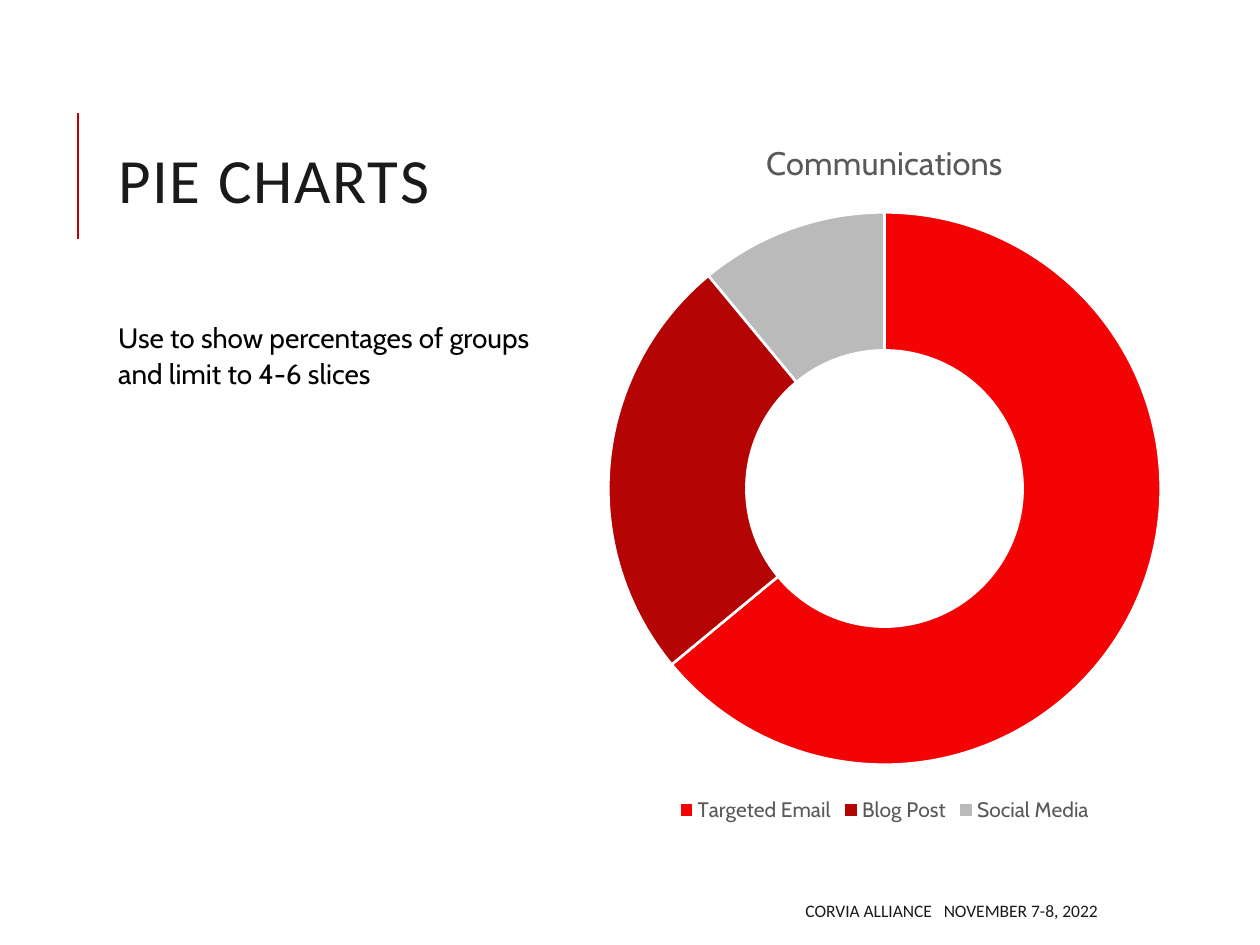
"""Build the pie chart guidance slide with its communications doughnut."""
from dataclasses import dataclass

from lxml.etree import SubElement
from pptx import Presentation
from pptx.chart.data import CategoryChartData
from pptx.dml.color import RGBColor
from pptx.enum.chart import XL_CHART_TYPE, XL_LEGEND_POSITION
from pptx.enum.shapes import MSO_CONNECTOR
from pptx.enum.text import MSO_ANCHOR, PP_ALIGN
from pptx.oxml.ns import qn
from pptx.util import Pt


@dataclass(frozen=True)
class Theme:
    heading_font: str = "Calibri"
    body_font: str = "Cabin"
    ink: str = "1A1A1A"
    body: str = "000000"
    muted: str = "595959"
    accent: str = "B40404"
    gap: str = "FFFFFF"
    slices: tuple = ("F30303", "B40404", "BABABA")
    title_size: float = 36
    body_size: float = 16
    footer_size: float = 10
    chart_size: float = 10
    chart_title_size: float = 18.6
    legend_size: float = 12


THEME = Theme()


def apply_format(target, values):
    for name, value in values.items():
        setattr(target, name, value)


def style_font(font, family, size, color):
    apply_format(font, {"name": family, "size": Pt(size), "bold": False})
    font.color.rgb = RGBColor.from_string(color)


def add_text(slide, box, pieces, font_style, paragraph_format, anchor=MSO_ANCHOR.TOP):
    frame = slide.shapes.add_textbox(*map(Pt, box)).text_frame
    apply_format(frame, {"word_wrap": True, "vertical_anchor": anchor})
    paragraph = frame.paragraphs[0]
    apply_format(paragraph, paragraph_format)
    for wording, tracking in pieces:
        run = paragraph.add_run()
        run.text = wording
        style_font(run.font, *font_style)
        if tracking:
            run.font._element.set("spc", str(round(tracking * 100)))


def add_rule(slide, start, end):
    rule = slide.shapes.add_connector(MSO_CONNECTOR.STRAIGHT, *map(Pt, start + end))
    rule.line.color.rgb = RGBColor.from_string(THEME.accent)
    rule.line.width = Pt(1.5)
    SubElement(rule._element.spPr, qn("a:effectLst"))


def add_doughnut(slide, box, title, shares):
    data = CategoryChartData()
    data.categories = list(shares)
    data.add_series(title, list(shares.values()))
    chart = slide.shapes.add_chart(XL_CHART_TYPE.DOUGHNUT, *map(Pt, box), data).chart
    style_font(chart.font, THEME.body_font, THEME.chart_size, THEME.body)

    chart.has_title = True
    heading = chart.chart_title.text_frame
    heading.text = title
    style_font(heading.paragraphs[0].runs[0].font,
               THEME.body_font, THEME.chart_title_size, THEME.muted)

    chart.has_legend = True
    apply_format(chart.legend, {"position": XL_LEGEND_POSITION.BOTTOM,
                                "include_in_layout": False})
    style_font(chart.legend.font, THEME.body_font, THEME.legend_size, THEME.muted)

    plot = chart.plots[0]
    apply_format(plot, {"vary_by_categories": True, "has_data_labels": False})
    plot._element.find(qn("c:holeSize")).set("val", "75")
    for index, color in enumerate(THEME.slices):
        slice_format = plot.series[0].points[index].format
        slice_format.fill.solid()
        slice_format.fill.fore_color.rgb = RGBColor.from_string(color)
        slice_format.line.color.rgb = RGBColor.from_string(THEME.gap)
        slice_format.line.width = Pt(1.5)


def main():
    deck = Presentation()
    apply_format(deck, {"slide_width": Pt(720), "slide_height": Pt(540)})
    slide = deck.slides.add_slide(deck.slide_layouts[6])

    add_rule(slide, (44.64, 136.8), (44.64, 64.8))
    add_text(slide, (60.48, 37.44, 259.2, 136.8), [("PIE CHARTS", 1)],
             (THEME.heading_font, THEME.title_size, THEME.ink),
             {"line_spacing": 0.8}, MSO_ANCHOR.MIDDLE)
    add_doughnut(slide, (337.68, 64.8, 335.52, 408.24), "Communications",
                 {"Targeted Email": 64, "Blog Post": 25, "Social Media": 11})
    add_text(slide, (60.48, 177.84, 259.2, 295.92),
             [("Use to show percentages of groups and limit to 4-6 slices", 0)],
             (THEME.body_font, THEME.body_size, THEME.body),
             {"line_spacing": 1.08, "space_before": Pt(6), "space_after": Pt(2)})
    add_text(slide, (285.84, 509.76, 348.48, 21.6),
             [("CORVIA ALLIANCE", 0), (" ", 4.5), ("NOVEMBER 7-8, 2022", 0)],
             (THEME.heading_font, THEME.footer_size, THEME.ink),
             {"alignment": PP_ALIGN.RIGHT}, MSO_ANCHOR.MIDDLE)

    deck.save("out.pptx")


if __name__ == "__main__":
    main()
